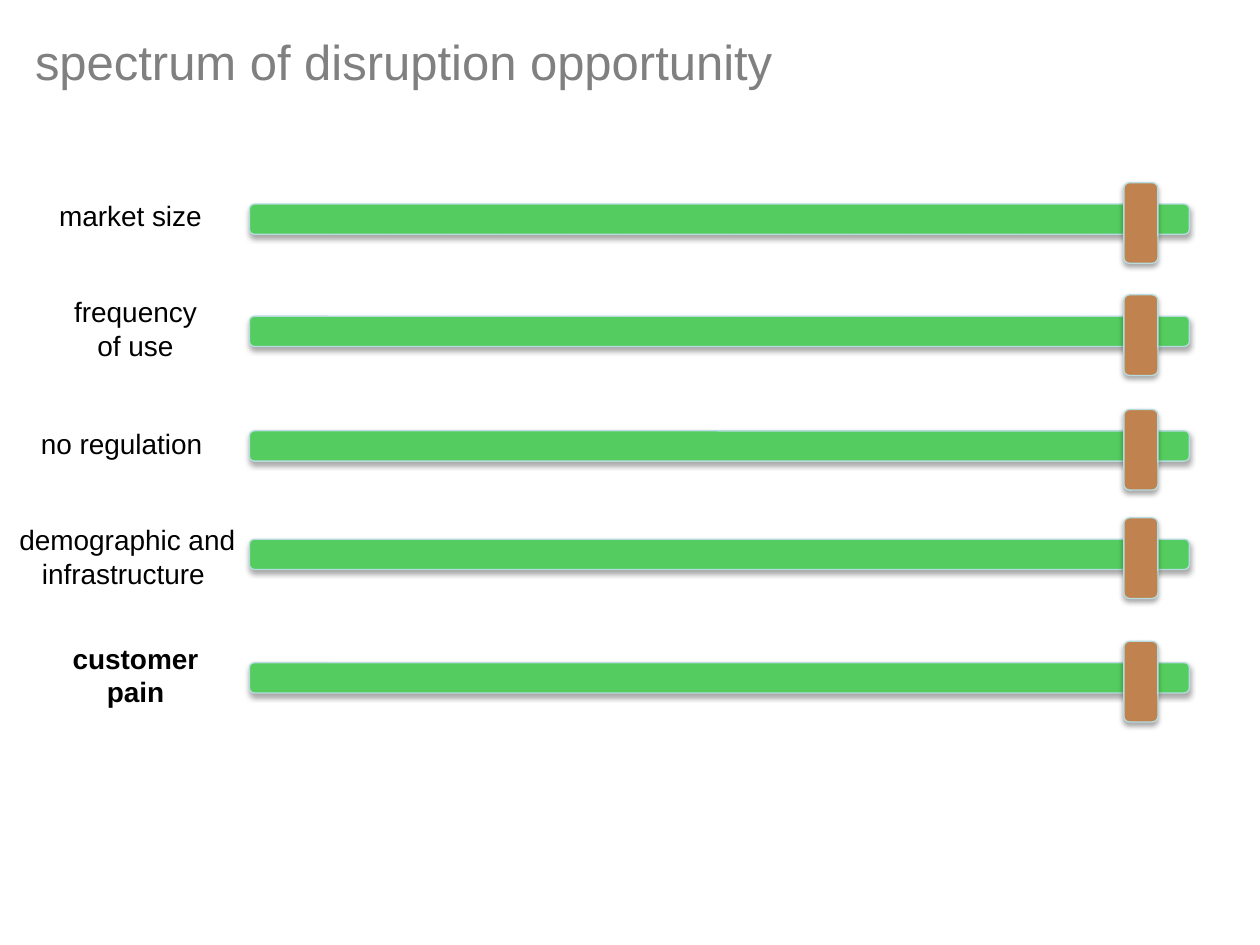
from lxml import etree
from pptx import Presentation
from pptx.dml.color import RGBColor
from pptx.enum.shapes import MSO_SHAPE
from pptx.enum.text import MSO_ANCHOR, PP_ALIGN
from pptx.oxml.ns import qn
from pptx.util import Inches, Pt

ROUNDED = MSO_SHAPE.ROUNDED_RECTANGLE
LEFT, CENTER = PP_ALIGN.LEFT, PP_ALIGN.CENTER
TOP, MIDDLE = MSO_ANCHOR.TOP, MSO_ANCHOR.MIDDLE

FONT = "Arial"
GREY = RGBColor(0x80, 0x80, 0x80)
BLACK = RGBColor(0x00, 0x00, 0x00)
GREEN = RGBColor(0x54, 0xCC, 0x5F)
BROWN = RGBColor(0xC0, 0x82, 0x4E)
EDGE = RGBColor(0xB6, 0xDC, 0xDF)

TRACK_LEFT, TRACK_WIDTH, TRACK_HEIGHT = 1.98, 7.46, 0.24
KNOB_OFFSET, KNOB_WIDTH, KNOB_HEIGHT = 6.94, 0.27, 0.64

# Track top, label text, label box (left, top, width, height), alignment, bold
SLIDERS = [
    (1.62, "market size", (0.37, 1.53, 1.41, 0.37), LEFT, False),
    (2.51, "frequency of use", (0.37, 2.29, 1.41, 0.64), CENTER, False),
    (3.42, "no regulation", (0.15, 3.34, 1.63, 0.37), CENTER, False),
    (4.28, "demographic and infrastructure ", (0.04, 4.1, 1.94, 0.64), CENTER, False),
    (5.26, "customer pain", (0.37, 5.04, 1.41, 0.64), CENTER, True),
]


def add_text(page, area, text, size, color, align=LEFT, anchor=TOP, bold=False):
    box = page.shapes.add_textbox(*map(Inches, area))
    frame = box.text_frame
    frame.word_wrap = True
    frame.vertical_anchor = anchor
    para = frame.paragraphs[0]
    para.alignment = align
    span = para.add_run()
    span.text = text
    span.font.name = FONT
    span.font.size = Pt(size)
    span.font.bold = bold
    span.font.color.rgb = color


def add_shadow(shape):
    """Give the shape a soft shadow that falls straight down."""
    shape.shadow.inherit = False
    effects = shape._element.spPr.find(qn("a:effectLst"))
    shadow = etree.SubElement(
        effects, qn("a:outerShdw"), blurRad=str(Pt(3.1)), dist=str(Pt(1.8)),
        dir="5400000", rotWithShape="0")
    color = etree.SubElement(shadow, qn("a:srgbClr"), val="000000")
    etree.SubElement(color, qn("a:alpha"), val="35000")


def add_bar(page, area, fill):
    bar = page.shapes.add_shape(ROUNDED, *map(Inches, area))
    bar.fill.solid()
    bar.fill.fore_color.rgb = fill
    bar.line.color.rgb = EDGE
    bar.line.width = Pt(0.75)
    add_shadow(bar)


def add_slider(page, left, top):
    """Draw a track with its knob centred on it vertically."""
    add_bar(page, (left, top, TRACK_WIDTH, TRACK_HEIGHT), GREEN)
    knob_top = top + TRACK_HEIGHT / 2 - KNOB_HEIGHT / 2 + 0.03
    add_bar(page, (left + KNOB_OFFSET, knob_top, KNOB_WIDTH, KNOB_HEIGHT), BROWN)


def build_spectrum(page):
    # Title
    add_text(page, (0.18, 0.2, 9, 0.56), "spectrum of disruption opportunity",
             28, GREY, anchor=MIDDLE)
    # Sliders with their labels
    for top, label, area, align, bold in SLIDERS:
        add_slider(page, TRACK_LEFT, top)
        add_text(page, area, label, 16, BLACK, align, bold=bold)


def main():
    deck = Presentation()
    deck.slide_width, deck.slide_height = Inches(10), Inches(7.5)
    build_spectrum(deck.slides.add_slide(deck.slide_layouts[6]))
    deck.save("out.pptx")


if __name__ == "__main__":
    main()
